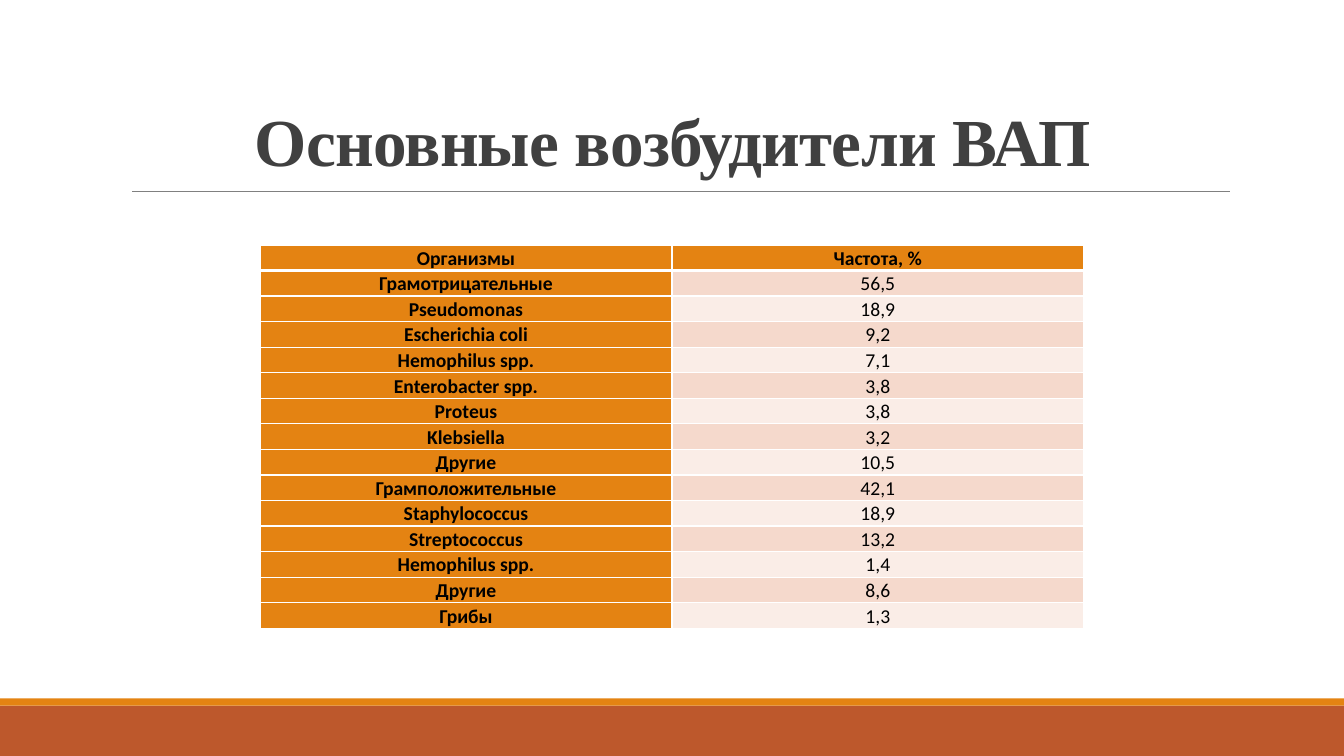
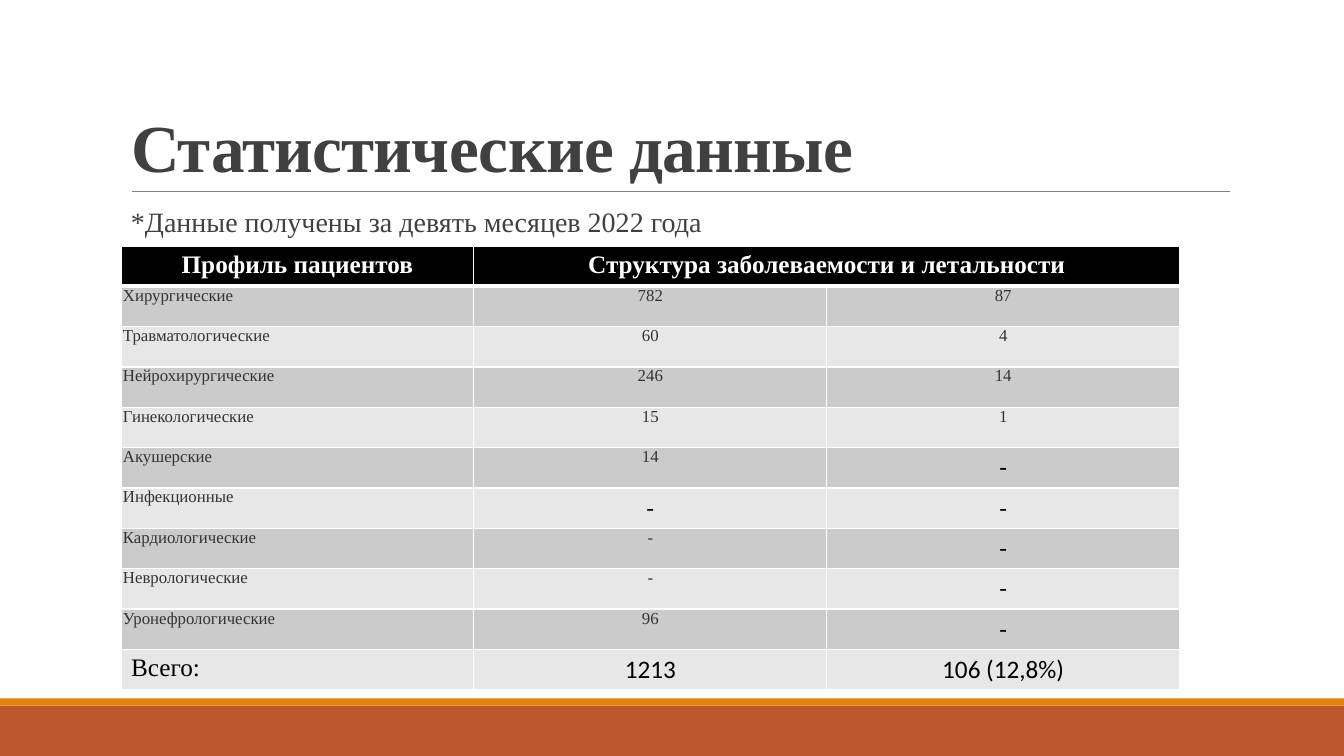
from dataclasses import dataclass, field

from lxml.etree import SubElement
from pptx import Presentation
from pptx.dml.color import RGBColor
from pptx.enum.shapes import MSO_CONNECTOR, MSO_SHAPE
from pptx.enum.text import MSO_ANCHOR, MSO_AUTO_SIZE, PP_ALIGN
from pptx.oxml.ns import qn
from pptx.util import Inches, Pt

WHITE = RGBColor(0xFF, 0xFF, 0xFF)
BLACK = RGBColor(0x00, 0x00, 0x00)
RUST = RGBColor(0xBD, 0x58, 0x2C)
ORANGE = RGBColor(0xE4, 0x83, 0x12)
RULE_GRAY = RGBColor(0x80, 0x80, 0x80)
HEADING_GRAY = RGBColor(0x40, 0x40, 0x40)
BODY_GRAY = RGBColor(0x33, 0x33, 0x33)
PEACH = RGBColor(0xF5, 0xD9, 0xCC)
PALE_PEACH = RGBColor(0xFA, 0xED, 0xE7)
GRAY = RGBColor(0xCB, 0xCB, 0xCB)
PALE_GRAY = RGBColor(0xE7, 0xE7, 0xE7)

SERIF = "Times New Roman"
SANS = "Calibri"
TITLE_ONLY = 5


@dataclass(frozen=True)
class TextStyle:
    size: float
    font: str
    color: RGBColor
    bold: bool = False
    align: PP_ALIGN = PP_ALIGN.CENTER
    line_spacing: float = 1.0
    side_inset: float = 0.1
    end_inset: float = 0.05


@dataclass(frozen=True)
class Entry:
    text: str
    style: TextStyle
    fill: RGBColor


@dataclass(frozen=True)
class Grid:
    left: float
    top: float
    column_width: float
    row_height: float
    rows: list[list[Entry]] = field(default_factory=list)


@dataclass(frozen=True)
class Band:
    top: float
    height: float
    color: RGBColor


BANDS = [Band(7, 0.5, RUST), Band(6.93, 0.07, ORANGE)]

TITLE = TextStyle(48, SERIF, HEADING_GRAY, True, PP_ALIGN.LEFT, 0.85)
CENTERED_TITLE = TextStyle(48, SERIF, HEADING_GRAY, True, PP_ALIGN.CENTER, 0.85)
REMARK = TextStyle(20, SERIF, HEADING_GRAY, False, PP_ALIGN.LEFT, 0.9)
ORGANISM = TextStyle(14, SANS, BLACK, True, PP_ALIGN.CENTER, 1.07, 0.08, 0)
FREQUENCY = TextStyle(14, SANS, BLACK, False, PP_ALIGN.CENTER, 1.07, 0.08, 0)
PROFILE_HEADER = TextStyle(18, SERIF, WHITE, True)
PROFILE = TextStyle(12, SERIF, BODY_GRAY, False, PP_ALIGN.LEFT, 1.0, 0.02, 0)
COUNT = TextStyle(12, SERIF, BODY_GRAY, False, PP_ALIGN.CENTER, 1.0, 0.02, 0)
LARGE_COUNT = TextStyle(18, SANS, BLACK)
TOTAL_LABEL = TextStyle(18, SERIF, BLACK, False, PP_ALIGN.LEFT)

PATHOGENS = [
    ("Грамотрицательные", "56,5"),
    ("Pseudomonas", "18,9"),
    ("Escherichia coli", "9,2"),
    ("Hemophilus spp.", "7,1"),
    ("Enterobacter spp.", "3,8"),
    ("Proteus", "3,8"),
    ("Klebsiella", "3,2"),
    ("Другие", "10,5"),
    ("Грамположительные", "42,1"),
    ("Staphylococcus", "18,9"),
    ("Streptococcus", "13,2"),
    ("Hemophilus spp.", "1,4"),
    ("Другие", "8,6"),
    ("Грибы", "1,3"),
]

PATIENTS = [
    ("Хирургические", "782", "87", COUNT, COUNT),
    ("Травматологические", "60", "4", COUNT, COUNT),
    ("Нейрохирургические", "246", "14", COUNT, COUNT),
    ("Гинекологические", "15", "1", COUNT, COUNT),
    ("Акушерские", "14", "-", COUNT, LARGE_COUNT),
    ("Инфекционные", "-", "-", LARGE_COUNT, LARGE_COUNT),
    ("Кардиологические", "-", "-", COUNT, LARGE_COUNT),
    ("Неврологические", "-", "-", COUNT, LARGE_COUNT),
    ("Уронефрологические", "96", "-", COUNT, LARGE_COUNT),
]


def write(frame, text: str, style: TextStyle) -> None:
    paragraph = frame.paragraphs[0]
    paragraph.alignment = style.align
    paragraph.line_spacing = style.line_spacing
    run = paragraph.add_run()
    run.text = text
    font_values = {"size": Pt(style.size), "name": style.font, "bold": style.bold}
    for name, value in font_values.items():
        setattr(run.font, name, value)
    run.font.color.rgb = style.color


def set_insets(holder, style: TextStyle) -> None:
    insets = {
        "margin_left": style.side_inset,
        "margin_right": style.side_inset,
        "margin_top": style.end_inset,
        "margin_bottom": style.end_inset,
    }
    for name, value in insets.items():
        setattr(holder, name, Inches(value))


def add_backdrop(slide) -> None:
    for band in BANDS:
        strip = slide.shapes.add_shape(
            MSO_SHAPE.RECTANGLE, 0, Inches(band.top), Inches(13.33), Inches(band.height)
        )
        strip.shadow.inherit = False
        strip.fill.solid()
        strip.fill.fore_color.rgb = band.color
        strip.line.fill.background()
    rule = slide.shapes.add_connector(
        MSO_CONNECTOR.STRAIGHT, Inches(1.31), Inches(1.9), Inches(12.2), Inches(1.9)
    )
    rule.line.color.rgb = RULE_GRAY
    rule.line.width = Pt(0.5)
    SubElement(rule._element.spPr, qn("a:effectLst"))


def add_titled_slide(deck, text: str, left: float, top: float, style: TextStyle):
    slide = deck.slides.add_slide(deck.slide_layouts[TITLE_ONLY])
    add_backdrop(slide)
    title = slide.shapes.title
    placement = {"left": left, "top": top, "width": 11, "height": 1.59}
    for name, value in placement.items():
        setattr(title, name, Inches(value))
    frame = title.text_frame
    frame_values = {
        "vertical_anchor": MSO_ANCHOR.BOTTOM,
        "auto_size": MSO_AUTO_SIZE.NONE,
        "word_wrap": True,
    }
    for name, value in frame_values.items():
        setattr(frame, name, value)
    set_insets(frame, style)
    write(frame, text, style)
    frame.paragraphs[0].runs[0]._r.get_or_add_rPr().set("spc", "-50")
    return slide


def add_borders(cell, row: int) -> None:
    widths = {"L": 1, "R": 1, "T": 3 if row == 1 else 1, "B": 3 if row == 0 else 1}
    properties = cell._tc.get_or_add_tcPr()
    for side, width in widths.items():
        edge = SubElement(properties, qn(f"a:ln{side}"), w=str(Pt(width)))
        paint = SubElement(edge, qn("a:solidFill"))
        SubElement(paint, qn("a:srgbClr"), val=str(WHITE))


def add_grid(slide, grid: Grid):
    row_count, column_count = len(grid.rows), len(grid.rows[0])
    table = slide.shapes.add_table(
        row_count,
        column_count,
        Inches(grid.left),
        Inches(grid.top),
        Inches(grid.column_width * column_count),
        Inches(grid.row_height * row_count),
    ).table
    table.first_row = table.horz_banding = False
    for row, entries in enumerate(grid.rows):
        for column, entry in enumerate(entries):
            cell = table.cell(row, column)
            set_insets(cell, entry.style)
            add_borders(cell, row)
            cell.fill.solid()
            cell.fill.fore_color.rgb = entry.fill
            if entry.text:
                write(cell.text_frame, entry.text, entry.style)
    return table


def add_pathogens_slide(deck) -> None:
    slide = add_titled_slide(deck, "Основные возбудители ВАП", 1.17, 0.25, CENTERED_TITLE)
    header = [Entry(text, ORGANISM, ORANGE) for text in ("Организмы", "Частота, %")]
    body = [
        [
            Entry(organism, ORGANISM, ORANGE),
            Entry(frequency, FREQUENCY, (PEACH, PALE_PEACH)[index % 2]),
        ]
        for index, (organism, frequency) in enumerate(PATHOGENS)
    ]
    add_grid(slide, Grid(2.58, 2.43, 4.085, 0.25, [header, *body]))


def add_statistics_slide(deck) -> None:
    slide = add_titled_slide(deck, "Статистические данные", 1.2, 0.31, TITLE)
    remark = slide.shapes.add_textbox(Inches(1.2), Inches(2.02), Inches(11), Inches(0.4))
    remark.text_frame.word_wrap = True
    set_insets(remark.text_frame, REMARK)
    write(remark.text_frame, "*Данные получены за девять месяцев 2022 года", REMARK)

    header_texts = ("Профиль пациентов", "Структура заболеваемости и летальности", "")
    header = [Entry(text, PROFILE_HEADER, BLACK) for text in header_texts]
    body = []
    for index, (profile, cases, deaths, case_style, death_style) in enumerate(PATIENTS):
        fill = (GRAY, PALE_GRAY)[index % 2]
        body.append(
            [
                Entry(profile, PROFILE, fill),
                Entry(cases, case_style, fill),
                Entry(deaths, death_style, fill),
            ]
        )
    total = [
        Entry("Всего:", TOTAL_LABEL, PALE_GRAY),
        Entry("1213", LARGE_COUNT, PALE_GRAY),
        Entry("106 (12,8%)", LARGE_COUNT, PALE_GRAY),
    ]
    table = add_grid(slide, Grid(1.2, 2.44, 3.5, 0.4, [header, *body, total]))
    table.cell(0, 1).merge(table.cell(0, 2))


def main() -> None:
    deck = Presentation()
    deck.slide_width = Inches(13.33)
    deck.slide_height = Inches(7.5)
    add_pathogens_slide(deck)
    add_statistics_slide(deck)
    deck.save("out.pptx")


if __name__ == "__main__":
    main()
